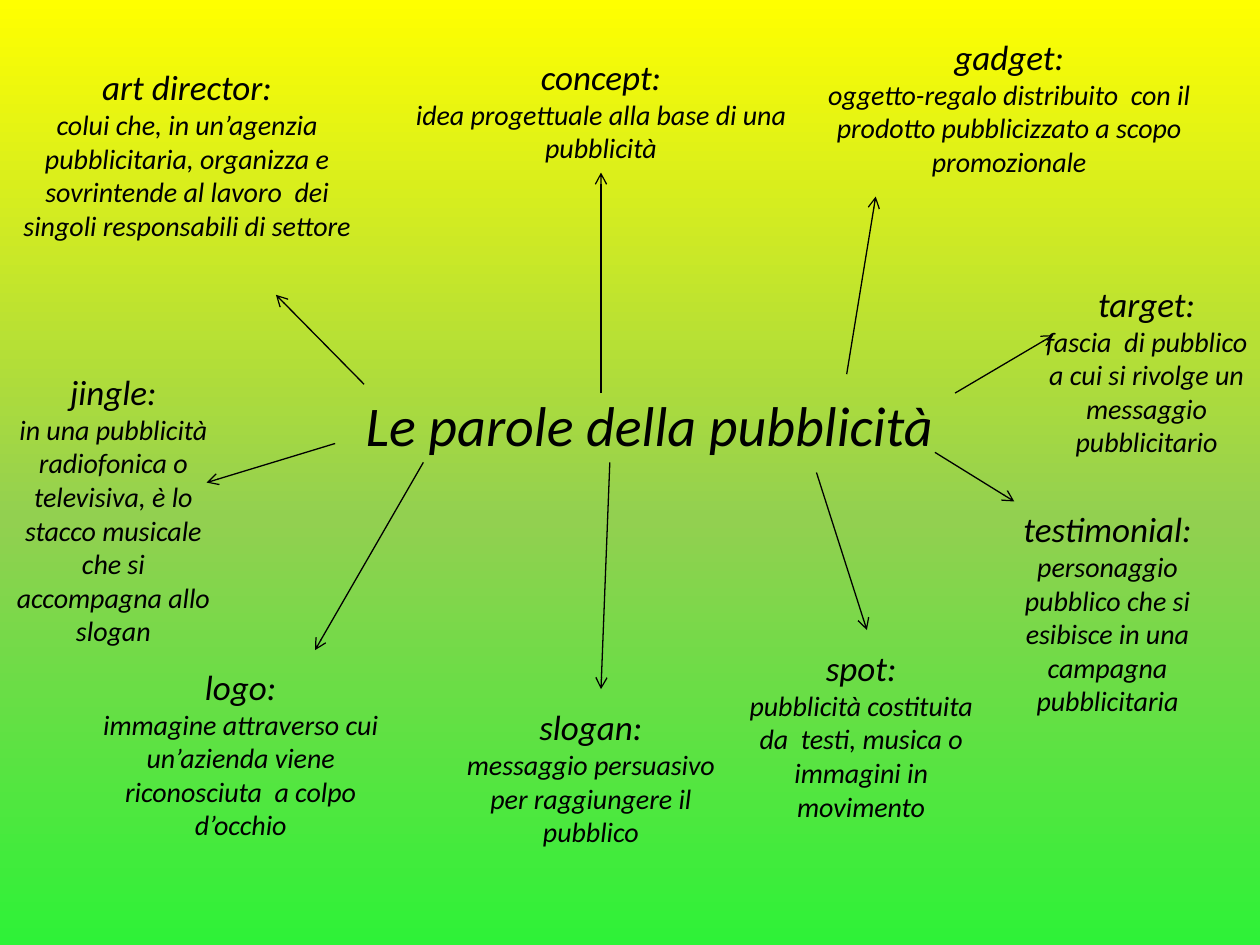
"""Build a word map of advertising terms on a yellow to green slide."""
import copy

import pptx
import pptx.dml.color
import pptx.enum.dml
import pptx.enum.shapes
import pptx.enum.text
import pptx.oxml
import pptx.oxml.ns
import pptx.util

Inches = pptx.util.Inches
Pt = pptx.util.Pt
RGBColor = pptx.dml.color.RGBColor

BLACK = RGBColor(0, 0, 0)
YELLOW = RGBColor(0xFF, 0xFF, 0x00)
OLIVE = RGBColor(0x92, 0xD0, 0x50)
GREEN = RGBColor(0x2E, 0xF2, 0x37)

STOPS = [(0, YELLOW), (0.55, OLIVE), (1, GREEN)]
FONT = {"name": "Calibri", "italic": True}
FRAME = {"word_wrap": True, "auto_size": pptx.enum.text.MSO_AUTO_SIZE.SHAPE_TO_FIT_TEXT}
TOPIC = ("Le parole della pubblicità", (2.11, 3.05, 6.09, 0.64))

TERMS = [
    ("art director:", "colui che, in un’agenzia pubblicitaria, organizza e sovrintende "
     "al lavoro  dei singoli responsabili di settore", (0, 0.47, 2.97, 1.51)),
    ("concept:", "idea progettuale alla base di una pubblicità", (3.05, 0.39, 3.44, 0.98)),
    ("gadget:", "oggetto-regalo distribuito  con il prodotto pubblicizzato a scopo "
     "promozionale", (6.33, 0.23, 3.36, 1.25)),
    ("jingle:", "in una pubblicità radiofonica o televisiva, è lo stacco musicale che si "
     "accompagna allo slogan", (0, 2.89, 1.8, 2.32)),
    ("logo:", "immagine attraverso cui un’azienda viene riconosciuta  a colpo d’occhio",
     (0.62, 5.23, 2.58, 1.51)),
    ("slogan:", "messaggio persuasivo per raggiungere il pubblico", (3.52, 5.55, 2.34, 1.25)),
    ("spot:", "pubblicità costituita da  testi, musica o immagini in movimento",
     (5.78, 5.08, 2.11, 1.51)),
    ("target:", "fascia  di pubblico a cui si rivolge un messaggio pubblicitario",
     (8.2, 2.19, 1.8, 1.78)),
    ("testimonial:", "personaggio pubblico che si esibisce in una campagna pubblicitaria",
     (7.89, 3.98, 1.8, 1.78)),
]

ARROWS = [
    (2.89, 3.05, 2.19, 2.34),
    (4.77, 3.12, 4.77, 1.37),
    (6.72, 2.97, 6.95, 1.56),
    (7.58, 3.12, 8.36, 2.66),
    (7.42, 3.59, 8.05, 3.98),
    (6.48, 3.75, 6.88, 5),
    (4.84, 3.67, 4.77, 5.47),
    (3.36, 3.67, 2.5, 5.16),
    (2.66, 3.52, 1.64, 3.83),
]


def apply(item, values):
    for name, value in values.items():
        setattr(item, name, value)


def write(para, text, size):
    para.alignment = pptx.enum.text.PP_ALIGN.CENTER
    run = para.add_run()
    run.text = text
    apply(run.font, FONT | {"size": Pt(size)})
    run.font.color.rgb = BLACK


def paint(slide):
    fill = slide.background.fill
    fill.gradient()
    fill.gradient_angle = 270
    stops = slide.element.find(".//" + pptx.oxml.ns.qn("a:gsLst"))
    stops.append(copy.deepcopy(stops[-1]))
    for stop, (place, color) in zip(fill.gradient_stops, STOPS):
        stop.position = place
        stop.color.rgb = color


def add_topic(slide):
    text, box = TOPIC
    holder = slide.placeholders[1]
    apply(holder, dict(zip(("left", "top", "width", "height"), map(Inches, box))))
    write(holder.text_frame.paragraphs[0], text, 32)


def add_term(slide, term, sense, box):
    frame = slide.shapes.add_textbox(*map(Inches, box)).text_frame
    apply(frame, FRAME)
    write(frame.paragraphs[0], term, 20)
    write(frame.add_paragraph(), sense, 16)


def add_arrow(slide, ends):
    kind = pptx.enum.shapes.MSO_CONNECTOR.STRAIGHT
    arrow = slide.shapes.add_connector(kind, *map(Inches, ends))
    arrow.line.color.rgb = BLACK
    arrow.line.width = Pt(0.75)
    props = arrow.element.spPr
    tail = pptx.oxml.parse_xml(f'<a:tailEnd {pptx.oxml.ns.nsdecls("a")} type="arrow"/>')
    props.find(pptx.oxml.ns.qn("a:ln")).append(tail)
    props.append(pptx.oxml.parse_xml(f'<a:effectLst {pptx.oxml.ns.nsdecls("a")}/>'))


def main():
    deck = pptx.Presentation()
    apply(deck, {"slide_width": Inches(10), "slide_height": Inches(7.5)})
    slide = deck.slides.add_slide(deck.slide_layouts[0])
    title = slide.shapes.title.element
    title.getparent().remove(title)
    paint(slide)
    add_topic(slide)
    for term in TERMS:
        add_term(slide, *term)
    for ends in ARROWS:
        add_arrow(slide, ends)
    deck.save("out.pptx")


if __name__ == "__main__":
    main()
